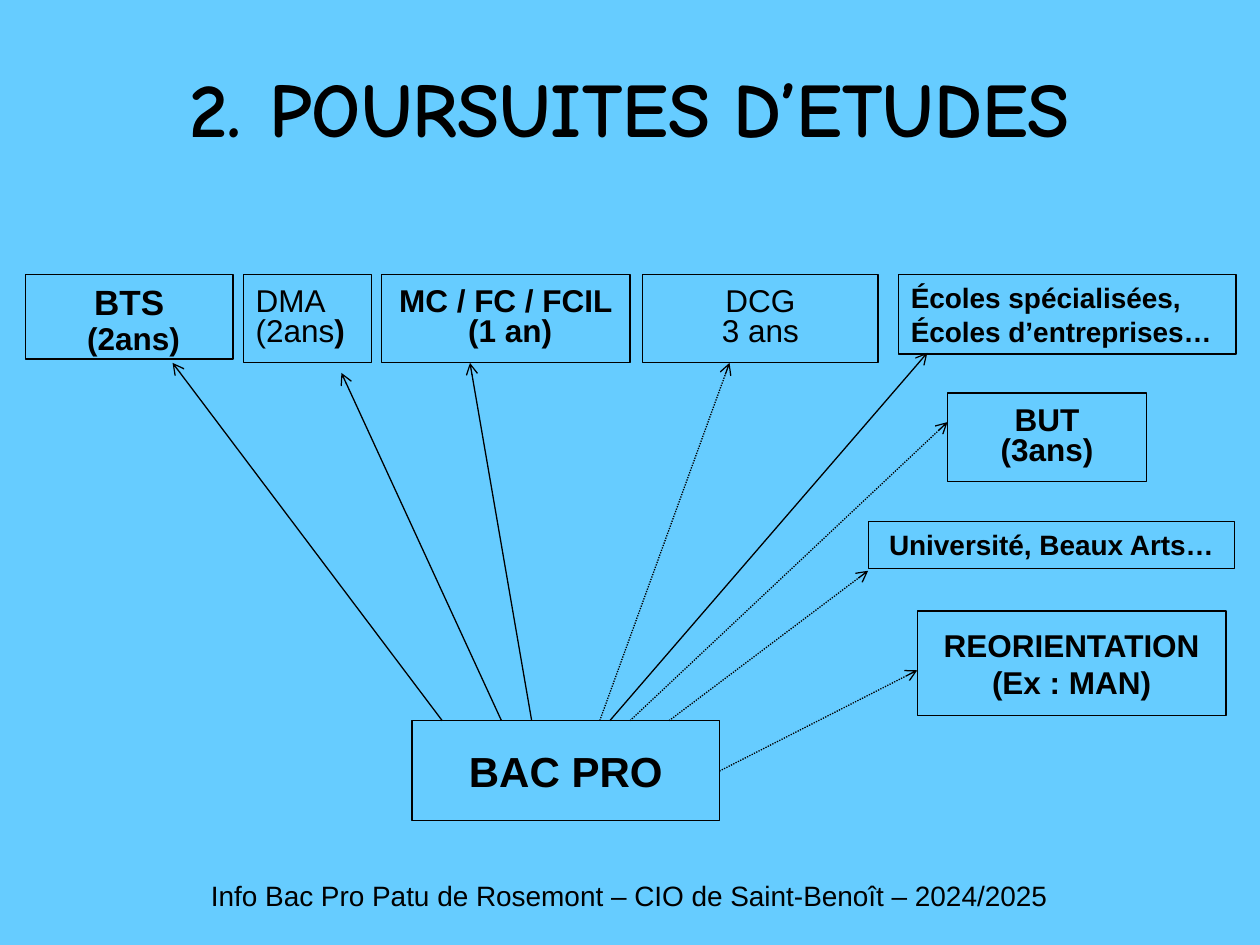
"""Build a slide showing the study paths open after a vocational diploma."""
from dataclasses import dataclass

from lxml.etree import SubElement
from pptx import Presentation
from pptx.dml.color import RGBColor
from pptx.enum.dml import MSO_LINE
from pptx.enum.shapes import MSO_CONNECTOR, MSO_SHAPE
from pptx.enum.text import MSO_ANCHOR, PP_ALIGN
from pptx.oxml.ns import qn
from pptx.util import Inches, Pt

SKY = RGBColor(0x66, 0xCC, 0xFF)
BLACK = RGBColor(0, 0, 0)
ROW_TOP = 2.18
ROW_BOTTOM = 2.88
SOURCE_TOP = 5.72


@dataclass(frozen=True)
class Span:
    text: str
    size: float = 18
    bold: bool = True
    font: str = "Arial"


@dataclass(frozen=True)
class Line:
    spans: tuple[Span, ...]
    spacing: float = 1.0


@dataclass(frozen=True)
class Box:
    left: float
    top: float
    width: float
    height: float
    lines: tuple[Line, ...]
    align: PP_ALIGN = PP_ALIGN.CENTER
    anchor: MSO_ANCHOR = MSO_ANCHOR.MIDDLE
    outlined: bool = True
    wrap: bool = True


@dataclass(frozen=True)
class Arrow:
    start_x: float
    end_x: float
    end_y: float
    dotted: bool = False
    start_y: float = SOURCE_TOP


def text_lines(*texts: str, size: float = 18, bold: bool = True,
               spacing: float = 1.0) -> tuple[Line, ...]:
    """Return one evenly formatted line for each text."""
    return tuple(Line((Span(text, size, bold),), spacing) for text in texts)


TITLE = Line((
    Span("2. POURSUITES", 44, font="Comic Neue"),
    Span(" ", 36, font="Comic Neue"),
    Span("D’ETUDES", 44, font="Comic Neue"),
))
BTS = (Line((Span("BTS", 20),)), Line((Span(" (2ans)"),), 0.9))
DMA = (
    Line((Span("DMA", bold=False),), 0.8),
    Line((Span("(2ans", bold=False), Span(")")), 0.8),
)
SCHOOLS = text_lines("Écoles spécialisées, Écoles d’entreprises…", size=16)
FOOTER = text_lines(
    "Info Bac Pro Patu de Rosemont – CIO de Saint-Benoît – 2024/2025",
    size=16, bold=False)

BOXES = (
    Box(0.5, 0.3, 9, 1.09, (TITLE,), outlined=False),
    Box(3.27, SOURCE_TOP, 2.44, 0.79, text_lines("BAC PRO", size=24), wrap=False),
    Box(0.2, ROW_TOP, 1.65, 0.67, BTS, anchor=MSO_ANCHOR.TOP),
    Box(1.93, ROW_TOP, 1.02, 0.7, DMA, align=PP_ALIGN.LEFT),
    Box(3.03, ROW_TOP, 1.97, 0.7,
        text_lines("MC / FC / FCIL", " (1 an)", spacing=0.8)),
    Box(5.1, ROW_TOP, 1.87, 0.7,
        text_lines("DCG", "3 ans", bold=False, spacing=0.8)),
    Box(7.13, ROW_TOP, 2.68, 0.63, SCHOOLS, PP_ALIGN.LEFT, MSO_ANCHOR.TOP),
    Box(7.52, 3.12, 1.58, 0.7, text_lines("BUT", "(3ans)", spacing=0.8)),
    Box(6.89, 4.14, 2.91, 0.37, text_lines("Université, Beaux Arts…", size=16),
        anchor=MSO_ANCHOR.TOP),
    Box(7.28, 4.85, 2.45, 0.83, text_lines("REORIENTATION", "(Ex : MAN)")),
    Box(1.06, 6.92, 7.87, 0.36, FOOTER, anchor=MSO_ANCHOR.TOP, outlined=False),
)

ARROWS = (
    Arrow(3.51, 1.37, ROW_BOTTOM),
    Arrow(3.98, 2.71, 2.96),
    Arrow(4.22, 3.73, ROW_BOTTOM),
    Arrow(4.76, 5.79, ROW_BOTTOM, dotted=True),
    Arrow(4.84, 7.36, 2.8),
    Arrow(5, 7.52, 3.35, dotted=True),
    Arrow(5.31, 6.89, 4.53, dotted=True),
    Arrow(5.71, 7.28, 5.32, dotted=True, start_y=6.12),
)


def write_line(para, line: Line, align: PP_ALIGN) -> None:
    """Fill a paragraph with the formatted spans of a line."""
    para.alignment = align
    para.line_spacing = line.spacing
    para.space_before = Pt(0)
    for span in line.spans:
        run = para.add_run()
        run.text = span.text
        run.font.name = span.font
        run.font.size = Pt(span.size)
        run.font.bold = span.bold
        run.font.color.rgb = BLACK


def draw_box(page, box: Box) -> None:
    """Draw a text box, with a rectangle around it when outlined."""
    place = [Inches(n) for n in (box.left, box.top, box.width, box.height)]
    if box.outlined:
        shape = page.shapes.add_shape(MSO_SHAPE.RECTANGLE, *place)
        shape.shadow.inherit = False
        shape.fill.background()
        shape.line.color.rgb = BLACK
        shape.line.width = Pt(0.75)
    else:
        shape = page.shapes.add_textbox(*place)
    frame = shape.text_frame
    frame.word_wrap = box.wrap
    frame.vertical_anchor = box.anchor
    for index, line in enumerate(box.lines):
        para = frame.add_paragraph() if index else frame.paragraphs[0]
        write_line(para, line, box.align)


def draw_arrow(page, arrow: Arrow) -> None:
    """Draw a straight arrow with an open head at its end."""
    connector = page.shapes.add_connector(
        MSO_CONNECTOR.STRAIGHT, Inches(arrow.start_x), Inches(arrow.start_y),
        Inches(arrow.end_x), Inches(arrow.end_y))
    connector.line.color.rgb = BLACK
    connector.line.width = Pt(0.75)
    if arrow.dotted:
        connector.line.dash_style = MSO_LINE.ROUND_DOT
    SubElement(connector.line._get_or_add_ln(), qn("a:tailEnd"), type="arrow")
    SubElement(connector._element.spPr, qn("a:effectLst"))


def main() -> None:
    """Build and save the deck."""
    deck = Presentation()
    deck.slide_width = Inches(10)
    deck.slide_height = Inches(7.5)
    page = deck.slides.add_slide(deck.slide_layouts[6])
    page.background.fill.solid()
    page.background.fill.fore_color.rgb = SKY
    for box in BOXES:
        draw_box(page, box)
    for arrow in ARROWS:
        draw_arrow(page, arrow)
    deck.save("out.pptx")


if __name__ == "__main__":
    main()
